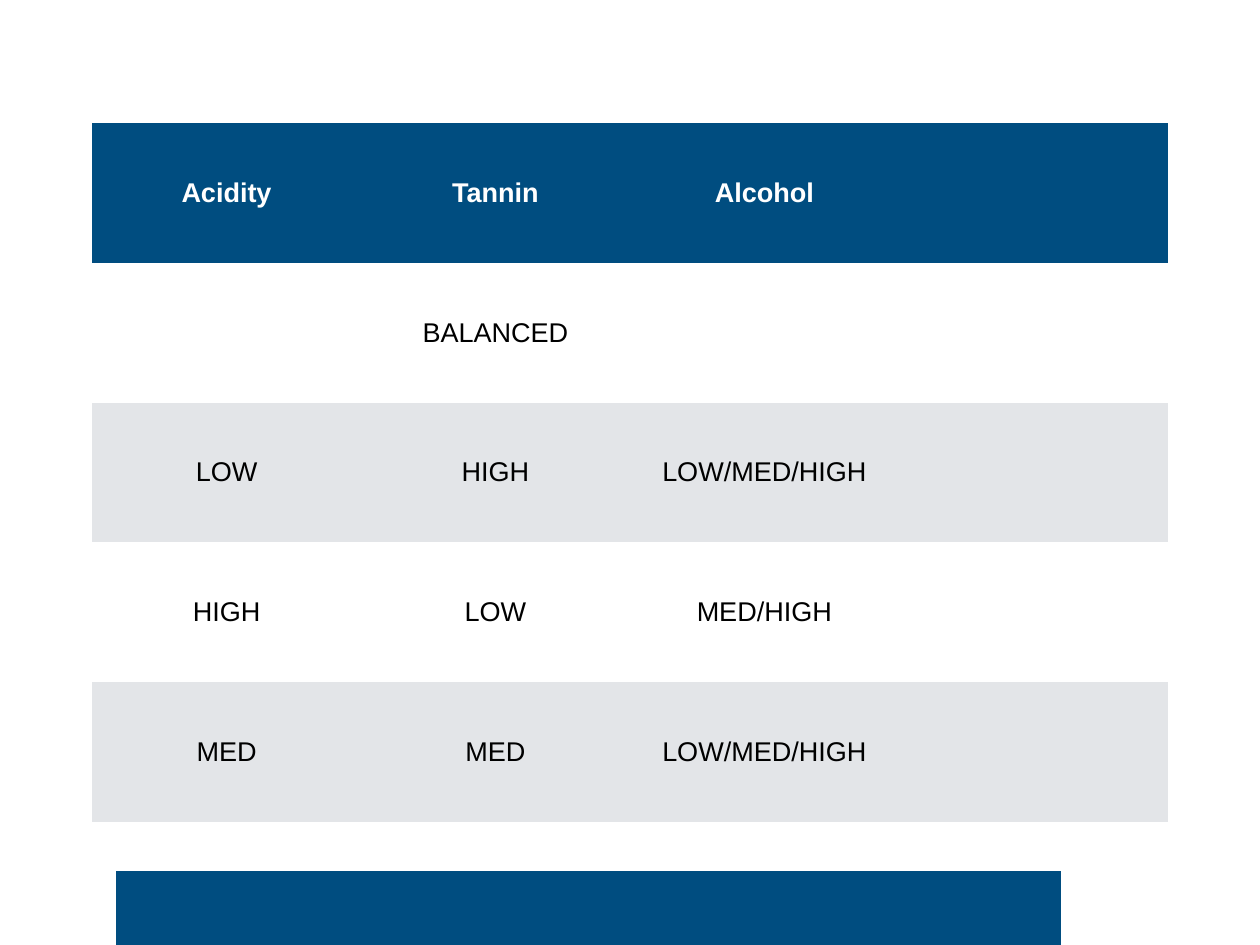
from pptx import Presentation
from pptx.dml.color import RGBColor
from pptx.enum.text import MSO_ANCHOR, PP_ALIGN
from pptx.util import Inches, Pt

NAVY = RGBColor(0x00, 0x4D, 0x80)
GREY = RGBColor(0xE3, 0xE5, 0xE8)
WHITE = RGBColor(0xFF, 0xFF, 0xFF)
BLACK = RGBColor(0x00, 0x00, 0x00)
NO_STYLE = "{2D5ABB26-0587-4C30-8999-92F81FD0307C}"

BALANCE = [
    ["Acidity", "Tannin", "Alcohol", ""],
    ["", "BALANCED", "", ""],
    ["LOW", "HIGH", "LOW/MED/HIGH", ""],
    ["HIGH", "LOW", "MED/HIGH", ""],
    ["MED", "MED", "LOW/MED/HIGH", ""],
]
EMPTY = [[""] * 4 for _ in range(5)]


def write(tf, text, font="Arial", size=22, color=BLACK, bold=False, align=PP_ALIGN.CENTER):
    p = tf.paragraphs[0]
    p.alignment = align
    r = p.add_run()
    r.text = text
    r.font.name = font
    r.font.size = Pt(size)
    r.font.bold = bold
    r.font.color.rgb = color


class Deck:
    inset = Inches(0.06)

    def __init__(self, width, height):
        self.prs = Presentation()
        self.prs.slide_width = Inches(width)
        self.prs.slide_height = Inches(height)
        self.s = self.prs.slides.add_slide(self.prs.slide_layouts[6])

    def across(self, percent):
        return round(self.prs.slide_width * percent / 100)

    def down(self, percent):
        return round(self.prs.slide_height * percent / 100)

    def table(self, rows, left, top, width, height):
        sp = self.s.shapes.add_table(
            len(rows), len(rows[0]),
            self.across(left), self.down(top), self.across(width), self.down(height))
        tbl = sp.table
        tbl._tbl.tblPr[0].text = NO_STYLE
        for i, row in enumerate(rows):
            for j, text in enumerate(row):
                self.cell(tbl.cell(i, j), text, i)

    def cell(self, cell, text, row):
        header = row == 0
        cell.fill.solid()
        cell.fill.fore_color.rgb = NAVY if header else (GREY, WHITE)[row % 2]
        cell.vertical_anchor = MSO_ANCHOR.MIDDLE
        cell.margin_left = cell.margin_right = self.inset
        cell.margin_top = cell.margin_bottom = self.inset
        if text:
            write(cell.text_frame, text, color=WHITE if header else BLACK, bold=header)


def main():
    deck = Deck(14.22, 10.67)
    deck.table(BALANCE, left=7.31, top=13.03, width=85.37, height=73.95)
    deck.table(EMPTY, left=9.21, top=92.13, width=75.04, height=74.98)
    deck.prs.save("out.pptx")


if __name__ == "__main__":
    main()
